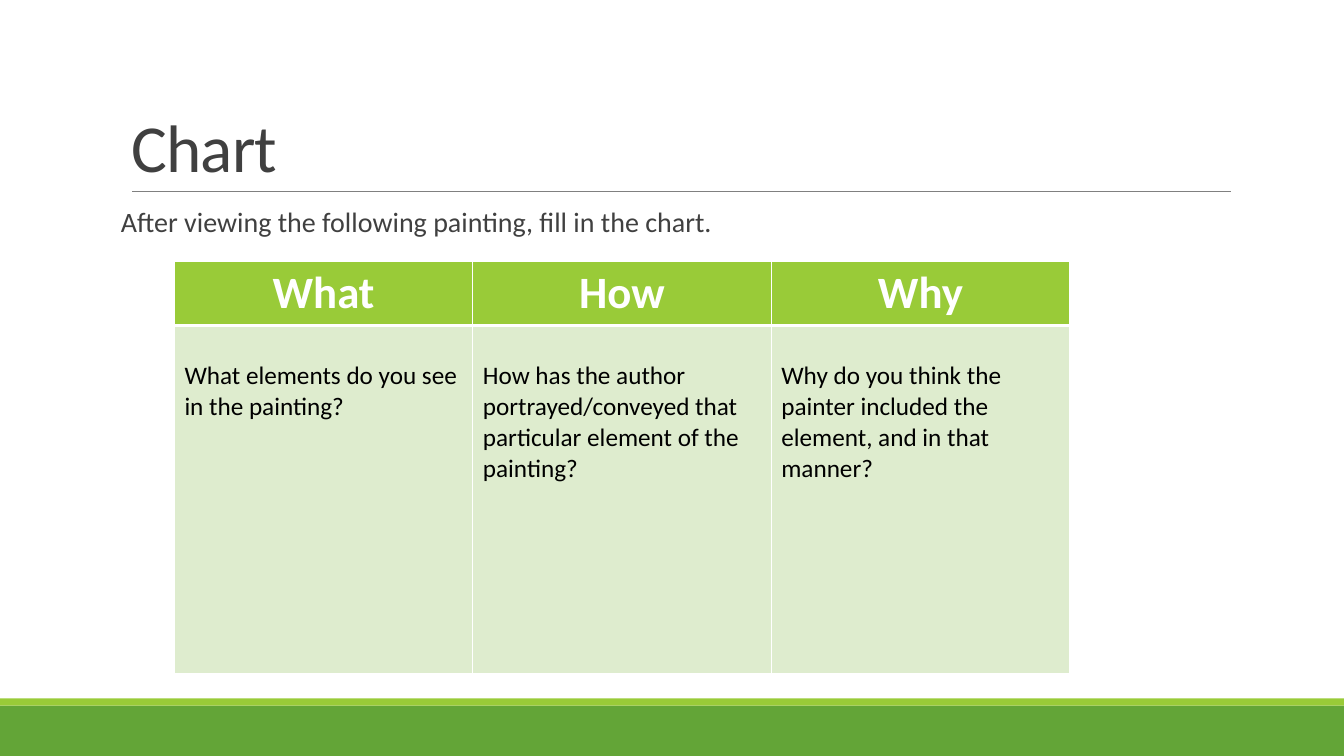
"""Build a slide with a What / How / Why chart for viewing a painting."""
from lxml.etree import SubElement
from pptx import Presentation
from pptx.dml.color import RGBColor
from pptx.enum.shapes import MSO_CONNECTOR as CONN, MSO_SHAPE as SHAPE
from pptx.enum.text import MSO_ANCHOR as ANCHOR, MSO_AUTO_SIZE as AUTO, PP_ALIGN as ALIGN
from pptx.oxml import parse_xml
from pptx.oxml.ns import nsdecls, qn
from pptx.util import Inches, Pt

TITLE = "Chart"
PROMPT = "After viewing the following painting, fill in the chart."
COLUMNS = [
    ("What", "What elements do you see in the painting?"),
    ("How", "How has the author portrayed/conveyed that particular element of the painting?"),
    ("Why", "Why do you think the painter included the element, and in that manner?"),
]
BANDS = [(7, 0.5, "63A537"), (6.93, 0.07, "99CB38")]
ROW_HEIGHTS = (0.64, 3.45)
TABLE_LEFT, TABLE_TOP, COLUMN_WIDTH = 1.73, 2.59, 2.96
GREEN, PALE, GREY, WHITE, BLACK = "99CB38", "DEECCE", "404040", "FFFFFF", "000000"


def rgb(value):
    return RGBColor.from_string(value)


def write(tf, text, size, color, bold=False, align=ALIGN.LEFT, spacing=None):
    p = tf.paragraphs[0]
    p.alignment = align
    p.line_spacing = spacing
    r = p.add_run()
    r.text = text
    r.font.name, r.font.size, r.font.bold = "Calibri", Pt(size), bold
    r.font.color.rgb = rgb(color)
    return r


def set_borders(cell, top, bottom):
    tcPr = cell._tc.get_or_add_tcPr()
    for i, (side, width) in enumerate((("L", 1), ("R", 1), ("T", top), ("B", bottom))):
        ln = parse_xml(f'<a:ln{side} {nsdecls("a")} w="{Pt(width)}"><a:solidFill>'
                       f'<a:srgbClr val="{WHITE}"/></a:solidFill></a:ln{side}>')
        tcPr.insert(i, ln)


def add_frame(s):
    for top, height, color in BANDS:
        band = s.shapes.add_shape(SHAPE.RECTANGLE, 0, Inches(top), Inches(13.33), Inches(height))
        band.shadow.inherit = False
        band.fill.solid()
        band.fill.fore_color.rgb = rgb(color)
        band.line.fill.background()
    rule = s.shapes.add_connector(CONN.STRAIGHT, Inches(1.31), Inches(1.9), Inches(12.21), Inches(1.9))
    rule.line.color.rgb = rgb("808080")
    rule.line.width = Pt(0.5)
    SubElement(rule._element.spPr, qn("a:effectLst"))


def add_heading(s):
    title = s.shapes.title
    title.left, title.top, title.width, title.height = map(Inches, (1.2, 0.31, 11, 1.59))
    tf = title.text_frame
    tf.auto_size, tf.vertical_anchor = AUTO.NONE, ANCHOR.BOTTOM
    r = write(tf, TITLE, 48, GREY, spacing=0.85)
    r.font._element.set("spc", "-50")

    box = s.shapes.add_textbox(Inches(1.2), Inches(2.02), Inches(11), Inches(0.45))
    tf = box.text_frame
    tf.word_wrap = True
    tf.margin_left = tf.margin_right = 0
    write(tf, PROMPT, 20, GREY, spacing=0.9)


def add_chart_table(s):
    table = s.shapes.add_table(
        len(ROW_HEIGHTS), len(COLUMNS), Inches(TABLE_LEFT), Inches(TABLE_TOP),
        Inches(COLUMN_WIDTH * len(COLUMNS)), Inches(sum(ROW_HEIGHTS))).table
    for row, height in zip(table.rows, ROW_HEIGHTS):
        row.height = Inches(height)
    for i, (heading, question) in enumerate(COLUMNS):
        table.columns[i].width = Inches(COLUMN_WIDTH)
        head, body = table.cell(0, i), table.cell(1, i)
        for cell, color in ((head, GREEN), (body, PALE)):
            cell.fill.solid()
            cell.fill.fore_color.rgb = rgb(color)
        write(head.text_frame, heading, 32, WHITE, bold=True, align=ALIGN.CENTER)
        write(body.text_frame, question, 18, BLACK)
        body.margin_top = Inches(0.35)
        set_borders(head, 1, 3)
        set_borders(body, 3, 1)


def main():
    prs = Presentation()
    prs.slide_width, prs.slide_height = Inches(13.33), Inches(7.5)
    s = prs.slides.add_slide(prs.slide_layouts[5])
    add_frame(s)
    add_heading(s)
    add_chart_table(s)
    prs.save("out.pptx")


if __name__ == "__main__":
    main()
